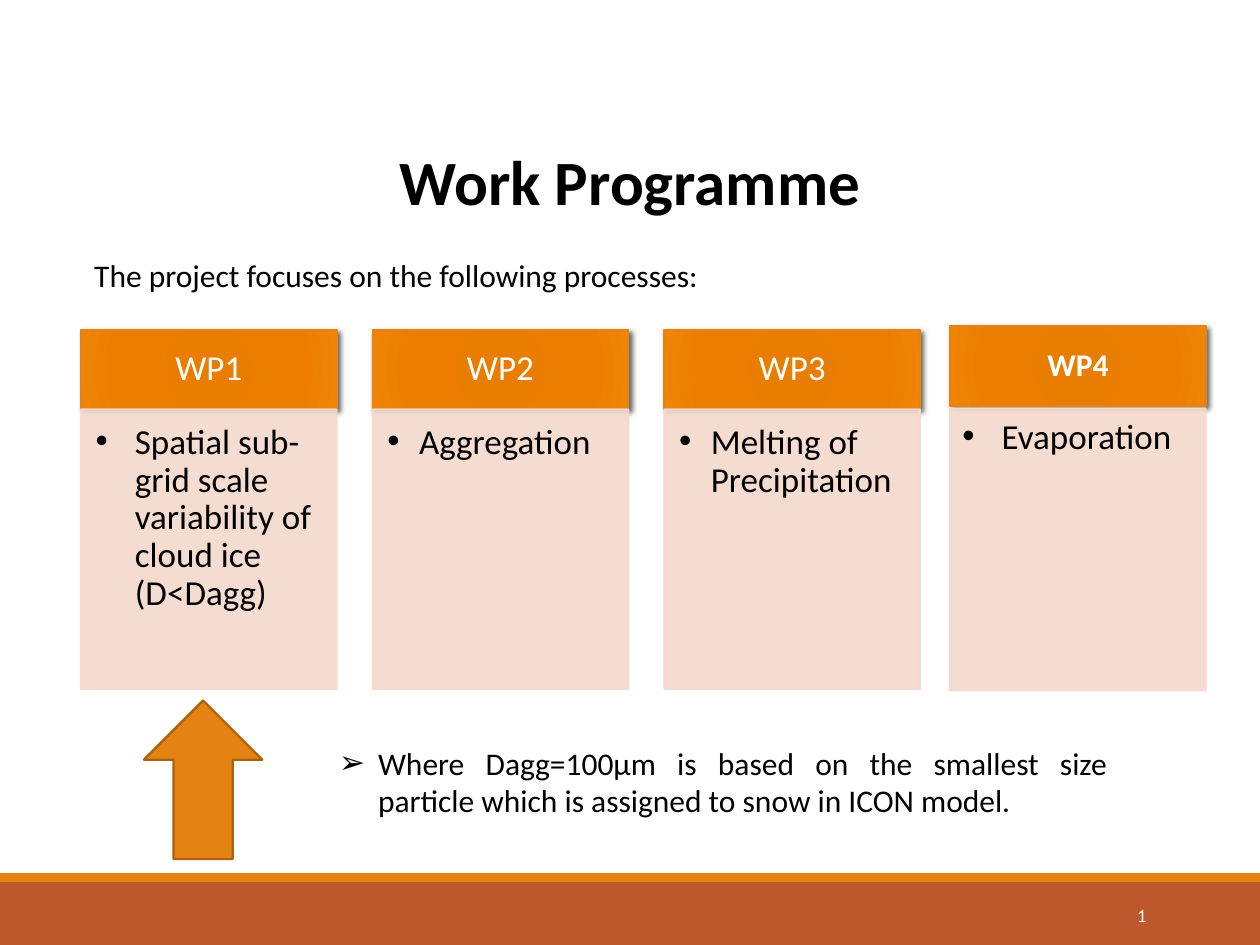
from dataclasses import dataclass

from lxml import etree
from pptx import Presentation
from pptx.dml.color import RGBColor
from pptx.enum.shapes import MSO_SHAPE
from pptx.enum.text import MSO_ANCHOR, MSO_AUTO_SIZE, PP_ALIGN
from pptx.oxml import parse_xml
from pptx.oxml.ns import nsdecls, qn
from pptx.util import Cm, Pt

RECT, UP_ARROW = MSO_SHAPE.RECTANGLE, MSO_SHAPE.UP_ARROW
TOP, MIDDLE, BOTTOM = MSO_ANCHOR.TOP, MSO_ANCHOR.MIDDLE, MSO_ANCHOR.BOTTOM
LEFT, CENTER, RIGHT, JUSTIFY = PP_ALIGN.LEFT, PP_ALIGN.CENTER, PP_ALIGN.RIGHT, PP_ALIGN.JUSTIFY
NO_AUTOFIT = MSO_AUTO_SIZE.NONE
INSETS = (0.25, 0.13, 0.25, 0.13)


@dataclass(frozen=True)
class Theme:
    font: str = "Calibri"
    black: str = "000000"
    white: str = "FFFFFF"
    orange: str = "E48312"
    outline: str = "A9610D"
    rust: str = "BD582C"
    peach: str = "F5D9CC"
    glow: tuple = ((0, "E57B00"), (34, "E87D00"), (70, "EB7E00"), (100, "EF8407"))
    title: float = 36
    card: float = 20
    text: float = 18
    number: float = 10.5


def apply(obj, values):
    for name, value in values.items():
        setattr(obj, name, value)


class Deck:
    def __init__(self, theme):
        self.theme = theme
        self.prs = Presentation()
        apply(self.prs, {"slide_width": Cm(25.4), "slide_height": Cm(19.05)})
        self.s = self.prs.slides.add_slide(self.prs.slide_layouts[1])

    def place(self, sp, box):
        apply(sp, dict(zip(("left", "top", "width", "height"), map(Cm, box))))

    def frame(self, sp, anchor=TOP, insets=INSETS, wrap=True):
        tf = sp.text_frame
        sides = ("margin_left", "margin_top", "margin_right", "margin_bottom")
        apply(tf, dict(zip(sides, map(Cm, insets))))
        apply(tf, {"word_wrap": wrap, "vertical_anchor": anchor, "auto_size": NO_AUTOFIT})
        return tf

    def paragraph(self, tf, text, size, color, align=LEFT, bold=False, spacing=1.0):
        p = tf.paragraphs[0]
        apply(p, {"alignment": align, "line_spacing": spacing,
                  "space_before": Pt(0), "space_after": Pt(0)})
        r = p.add_run()
        r.text = text
        apply(r.font, {"name": self.theme.font, "size": Pt(size), "bold": bold})
        r.font.color.rgb = RGBColor.from_string(color)
        return p

    def bullet(self, p, char, indent):
        pPr = p._p.get_or_add_pPr()
        pPr.set("marL", str(Cm(indent)))
        pPr.set("indent", str(-Cm(indent)))
        etree.SubElement(pPr, qn("a:buFont")).set("typeface", "Arial")
        etree.SubElement(pPr, qn("a:buChar")).set("char", char)

    def shape(self, kind, box, fill, line=None, weight=1):
        sp = self.s.shapes.add_shape(kind, *map(Cm, box))
        sp.shadow.inherit = False
        sp.fill.solid()
        sp.fill.fore_color.rgb = RGBColor.from_string(fill)
        if line:
            sp.line.color.rgb = RGBColor.from_string(line)
            sp.line.width = Pt(weight)
        else:
            sp.line.fill.background()
        return sp

    def radiate(self, sp):
        stops = "".join(f'<a:gs pos="{pos * 1000}"><a:srgbClr val="{color}"/></a:gs>'
                        for pos, color in self.theme.glow)
        grad = parse_xml(
            f'<a:gradFill {nsdecls("a")} rotWithShape="1"><a:gsLst>{stops}</a:gsLst>'
            '<a:path path="circle"><a:fillToRect l="50000" t="50000" r="50000" b="50000"/>'
            '</a:path></a:gradFill>')
        spPr = sp._element.spPr
        spPr.replace(spPr.find(qn("a:solidFill")), grad)
        spPr.find(qn("a:effectLst")).append(parse_xml(
            f'<a:outerShdw {nsdecls("a")} blurRad="{Pt(3)}" dist="{Pt(2)}" dir="2700000" '
            f'algn="tl" rotWithShape="0"><a:srgbClr val="{self.theme.black}">'
            '<a:alpha val="60000"/></a:srgbClr></a:outerShdw>'))

    def fade(self, sp, percent):
        for color in sp._element.spPr.iter(qn("a:srgbClr")):
            etree.SubElement(color, qn("a:alpha")).set("val", str(percent * 1000))

    def card(self, head_box, body_box, head, text, indent, size, bold, insets, spacing):
        t = self.theme
        sp = self.shape(RECT, head_box, t.orange, t.orange)
        self.radiate(sp)
        self.paragraph(self.frame(sp, MIDDLE), head, size, t.white, CENTER, bold, 0.9)
        sp = self.shape(RECT, body_box, t.peach, t.peach)
        self.fade(sp, 90)
        p = self.paragraph(self.frame(sp, TOP, insets), text, t.card, t.black, spacing=spacing)
        self.bullet(p, "•", indent)

    def title(self, box, text):
        sp = self.s.shapes.title
        self.place(sp, box)
        tf = self.frame(sp, BOTTOM, (0.25, 0.13, 0.25, 0.84))
        self.paragraph(tf, text, self.theme.title, self.theme.black, CENTER, True)

    def note(self, box, text):
        sp = self.s.placeholders[1]
        self.place(sp, box)
        p = self.paragraph(self.frame(sp), text, self.theme.text, self.theme.black, JUSTIFY)
        self.bullet(p, "➢", 0.79)

    def label(self, box, text):
        sp = self.s.shapes.add_textbox(*map(Cm, box))
        self.paragraph(self.frame(sp, wrap=False), text, self.theme.text, self.theme.black)

    def number(self, box, text):
        sp = self.s.shapes.add_textbox(*map(Cm, box))
        tf = self.frame(sp, MIDDLE)
        p = self.paragraph(tf, text, self.theme.number, self.theme.white, RIGHT)
        r = p.runs[0]._r
        fld = etree.Element(qn("a:fld"), id="{B6F15528-21DE-4FAA-801E-634DDDAF4B2B}",
                            type="slidenum")
        p._p.replace(r, fld)
        fld.extend(list(r))


def main():
    t = Theme()
    deck = Deck(t)
    deck.shape(RECT, (0, 17.78, 25.4, 1.27), t.rust)
    deck.shape(RECT, (0, 17.6, 25.4, 0.18), t.orange)
    deck.number((20.62, 17.93, 2.74, 1.02), "3")
    deck.title((0.5, 1.12, 24.4, 4.11), "Work Programme")

    packages = (
        ("WP1", "Spatial sub-grid scale variability of cloud ice (D<Dagg)", 0.79),
        ("WP2", "Aggregation", 0.64),
        ("WP3", "Melting of Precipitation", 0.64),
    )
    width, pitch = 5.16, 5.88
    for i, (head, text, indent) in enumerate(packages):
        x = 1.63 + i * pitch
        deck.card((x, 6.65, width, 1.6), (x, 8.25, width, 5.64), head, text, indent,
                  t.card, False, (0.3, 0.3, 0.4, 0.43), 0.9)
    x = 19.15
    deck.card((x, 6.58, width, 1.6), (x, 8.23, width, 5.69), "WP4", "Evaporation", 0.79,
              t.text, True, INSETS, 1.0)

    deck.shape(UP_ARROW, (2.9, 14.12, 2.39, 3.2), t.orange, t.outline, 1.25)
    deck.label((1.65, 5.03, 13.16, 1.02), "The project focuses on the following processes:")
    deck.note((6.58, 14.86, 16, 1.8),
              "Where Dagg=100µm is based on the smallest size particle "
              "which is assigned to snow in ICON model.")
    deck.prs.save("out.pptx")


if __name__ == "__main__":
    main()
